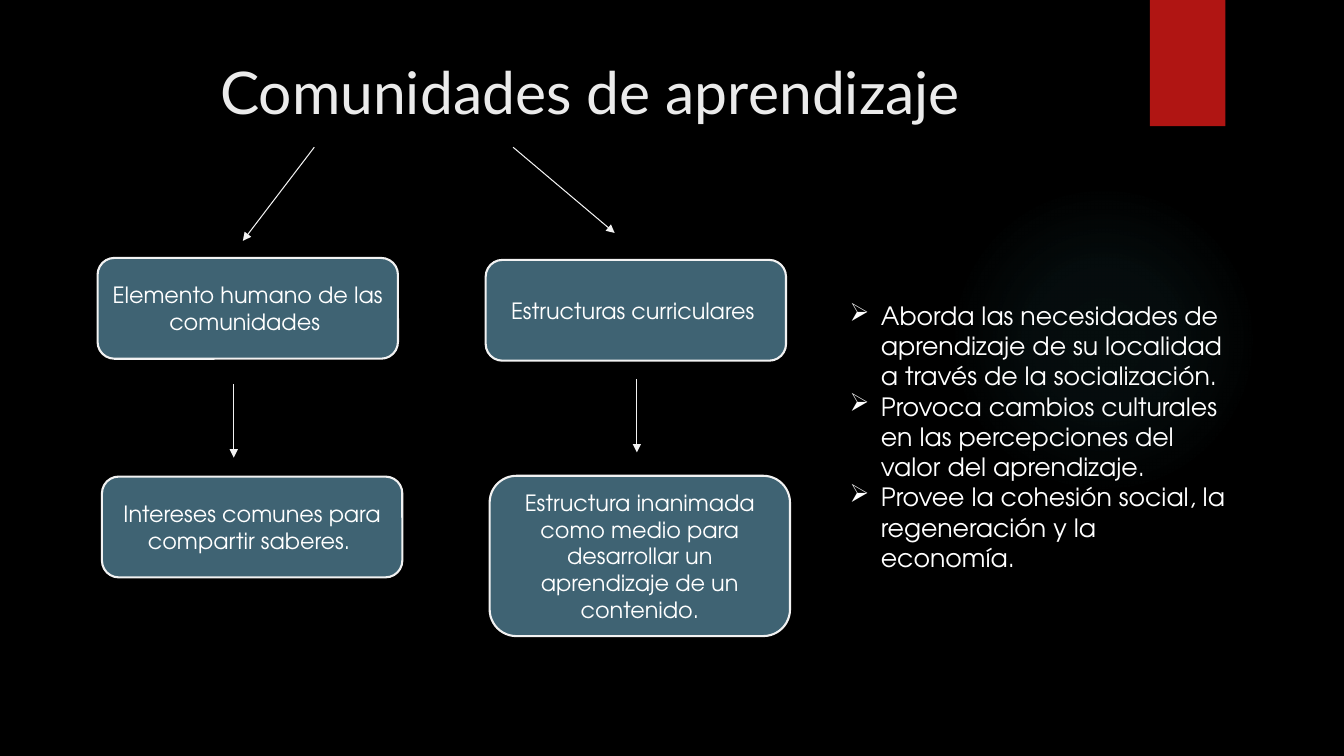
from dataclasses import dataclass

from lxml import etree
from pptx import Presentation
from pptx import oxml
from pptx.dml.color import RGBColor
from pptx.enum import shapes, text
from pptx.oxml import ns
from pptx.util import Cm, Pt


@dataclass(frozen=True)
class Theme:
    background: str = "000000"
    title_color: str = "EBEBEB"
    body_color: str = "FFFFFF"
    outline: str = "F2F2F2"
    concept: str = "3F6373"
    ribbon: str = "B01513"
    glow: str = "50B9C1"
    title_font: str = "Lato"
    body_font: str = "TeX Gyre Adventor"
    title_size: float = 42
    body_size: float = 18
    concept_size: float = 16


THEME = Theme()
CONCEPT_WIDTH = 7.57
CONCEPTS = [
    ("Elemento humano de las comunidades ", 2.46, 6.5, 2.54),
    ("Estructuras curriculares ", 12.24, 6.55, 2.54),
    ("Intereses comunes para compartir saberes. ", 2.57, 12.01, 2.54),
    ("Estructura inanimada como medio para desarrollar un aprendizaje de un contenido.",
     12.34, 11.99, 4.04),
]
ARROWS = [
    (7.92, 3.71, 6.12, 6.07),
    (12.93, 3.71, 15.49, 5.87),
    (5.89, 9.68, 5.89, 11.53),
    (16.05, 9.55, 16.05, 11.4),
]
BENEFITS = [
    "Aborda las necesidades de aprendizaje de su localidad a través de la socialización.",
    "Provoca cambios culturales en las percepciones del valor del aprendizaje.",
    "Provee la cohesión social, la regeneración y la economía.",
]


def rgb(color):
    return RGBColor.from_string(color)


def write(frame, *lines, size, color=THEME.body_color, font=THEME.body_font,
          align=text.PP_ALIGN.LEFT, anchor=text.MSO_ANCHOR.TOP, bullet=None):
    frame.word_wrap = True
    frame.auto_size = text.MSO_AUTO_SIZE.NONE
    frame.vertical_anchor = anchor
    for index, line in enumerate(lines):
        paragraph = frame.paragraphs[0] if index == 0 else frame.add_paragraph()
        paragraph.text = line
        paragraph.alignment = align
        if bullet:
            properties = paragraph._p.get_or_add_pPr()
            properties.set("marL", str(Cm(0.79)))
            properties.set("indent", str(-Cm(0.79)))
            etree.SubElement(properties, ns.qn("a:buChar")).set("char", bullet)
        paragraph.font.size = Pt(size)
        paragraph.font.name = font
        paragraph.font.color.rgb = rgb(color)


def add_block(slide, kind, left, top, width, height, fill=None, outline=None):
    block = slide.shapes.add_shape(kind, Cm(left), Cm(top), Cm(width), Cm(height))
    block.shadow.inherit = False
    if fill:
        block.fill.solid()
        block.fill.fore_color.rgb = rgb(fill)
    if outline:
        block.line.color.rgb = rgb(outline)
        block.line.width = Pt(1.5)
    else:
        block.line.fill.background()
    return block


def add_glow(slide):
    glow = add_block(slide, shapes.MSO_SHAPE.OVAL, 23.9, 4.65, 7.82, 7.82)
    stops = "".join(
        f'<a:gs pos="{position * 1000}"><a:srgbClr val="{THEME.glow}">'
        f'<a:alpha val="{opacity * 1000}"/></a:srgbClr></a:gs>'
        for position, opacity in [(0, 7), (36, 6), (69, 0)]
    )
    gradient = oxml.parse_xml(
        f'<a:gradFill {ns.nsdecls("a")}><a:gsLst>{stops}</a:gsLst><a:path path="circle">'
        '<a:fillToRect l="50000" t="50000" r="50000" b="50000"/></a:path></a:gradFill>'
    )
    glow._element.spPr.insert(2, gradient)


def add_concept(slide, label, left, top, height):
    concept = add_block(slide, shapes.MSO_SHAPE.ROUNDED_RECTANGLE, left, top,
                        CONCEPT_WIDTH, height, THEME.concept, THEME.outline)
    write(concept.text_frame, label, size=THEME.concept_size,
          align=text.PP_ALIGN.CENTER, anchor=text.MSO_ANCHOR.MIDDLE)


def add_arrow(slide, *ends):
    arrow = slide.shapes.add_connector(shapes.MSO_CONNECTOR.STRAIGHT, *map(Cm, ends))
    arrow.line.color.rgb = rgb(THEME.outline)
    arrow.line.width = Pt(0.75)
    etree.SubElement(arrow.line._get_or_add_ln(), ns.qn("a:tailEnd")).set("type", "triangle")
    etree.SubElement(arrow._element.spPr, ns.qn("a:effectLst"))


def add_title(slide, heading):
    title = slide.shapes.title
    title.left, title.top, title.width, title.height = map(Cm, (1.8, 1.27, 26.14, 3.89))
    write(title.text_frame, heading, size=THEME.title_size, color=THEME.title_color,
          font=THEME.title_font, align=text.PP_ALIGN.CENTER)


def add_benefits(slide):
    benefits = slide.shapes.add_textbox(*map(Cm, (21.16, 7.44, 10.03, 7.19)))
    write(benefits.text_frame, *BENEFITS, size=THEME.body_size, bullet="➢")


def main():
    deck = Presentation()
    deck.slide_width, deck.slide_height = Cm(33.87), Cm(19.05)
    slide = deck.slides.add_slide(deck.slide_layouts.get_by_name("Title Only"))
    slide.background.fill.solid()
    slide.background.fill.fore_color.rgb = rgb(THEME.background)
    add_glow(slide)
    add_block(slide, shapes.MSO_SHAPE.RECTANGLE, 28.98, 0, 1.9, 3.18, THEME.ribbon)
    add_title(slide, "Comunidades de aprendizaje")
    add_benefits(slide)
    for arrow in ARROWS:
        add_arrow(slide, *arrow)
    for concept in CONCEPTS:
        add_concept(slide, *concept)
    deck.save("out.pptx")


if __name__ == "__main__":
    main()
